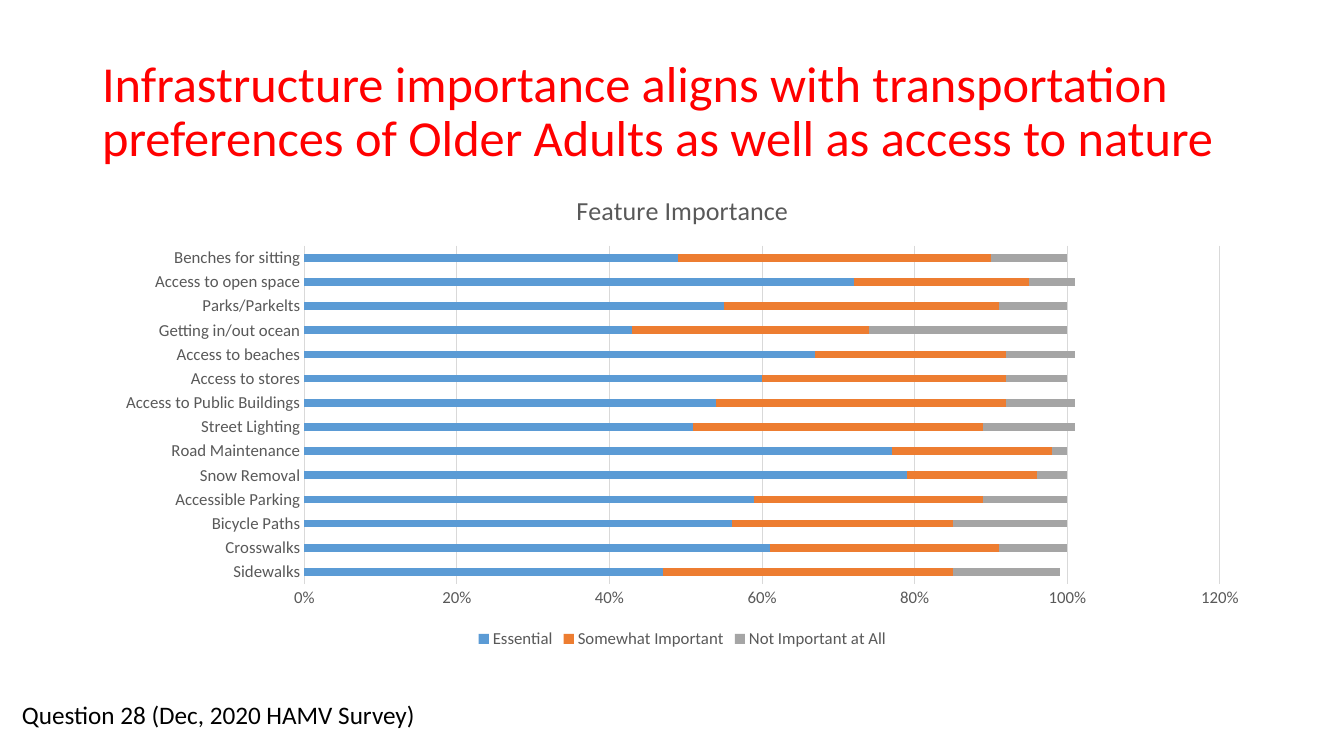
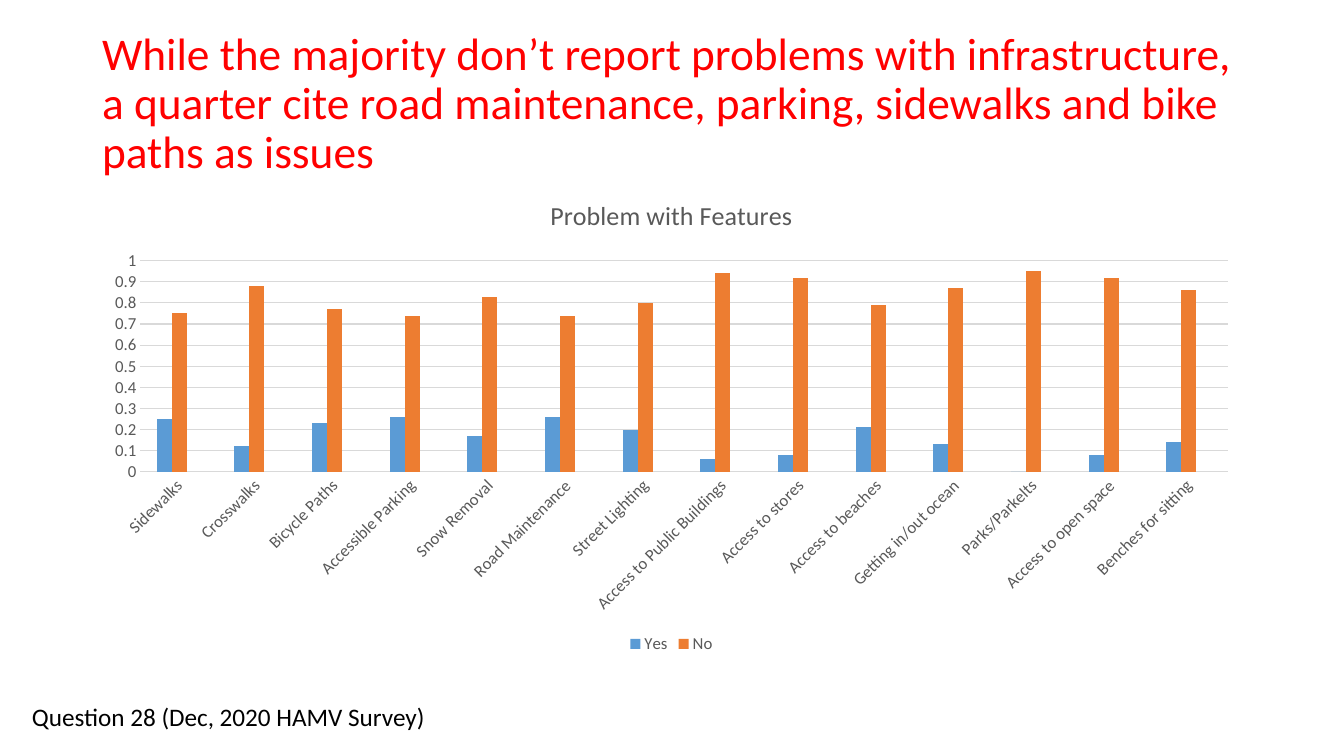
import pptx
import pptx.chart.data
import pptx.dml.color
import pptx.enum.chart
import pptx.enum.text
import pptx.oxml
import pptx.oxml.ns
import pptx.util
from dataclasses import dataclass


@dataclass(frozen=True)
class Theme:
    font: str = "Calibri"
    title: str = "FF0000"
    text: str = "000000"
    chart_text: str = "595959"
    grid: str = "D9D9D9"
    series: tuple = ("5B9BD5", "ED7D31", "A5A5A5")
    source_size: float = 18
    chart_title_size: float = 18.6
    label_size: float = 12
    line_width: float = 0.75


THEME = Theme()
EMU_PER_PX = 914400 / 100.8
CHART_TYPE = pptx.enum.chart.XL_CHART_TYPE
SOURCE = "Question 28 (Dec, 2020 HAMV Survey)"
FEATURES = [
    "Sidewalks", "Crosswalks", "Bicycle Paths", "Accessible Parking", "Snow Removal",
    "Road Maintenance", "Street Lighting", "Access to Public Buildings", "Access to stores",
    "Access to beaches", "Getting in/out ocean", "Parks/Parkelts", "Access to open space",
    "Benches for sitting",
]
SLIDES = [
    {
        "title": "Infrastructure importance aligns with transportation preferences "
                 "of Older Adults as well as access to nature",
        "title_size": 36,
        "title_box": (92, 40, 1159, 146),
        "chart_box": (103, 173, 1159, 480),
        "source_box": (12, 694, 440, 40),
        "chart_title": "Feature Importance",
        "chart_type": CHART_TYPE.BAR_STACKED,
        "overlap": 100,
        "number_format": "0%",
        "axis_top": 1.2,
        "axis_step": 0.2,
        "label_rotation": 0,
        "hidden_entries": [],
        "series": {
            "Essential": [0.47, 0.61, 0.56, 0.59, 0.79, 0.77, 0.51,
                          0.54, 0.6, 0.67, 0.43, 0.55, 0.72, 0.49],
            "Somewhat Important": [0.38, 0.3, 0.29, 0.3, 0.17, 0.21, 0.38,
                                   0.38, 0.32, 0.25, 0.31, 0.36, 0.23, 0.41],
            "Not Important at All": [0.14, 0.09, 0.15, 0.11, 0.04, 0.02, 0.12,
                                     0.09, 0.08, 0.09, 0.26, 0.09, 0.06, 0.1],
        },
    },
    {
        "title": "While the majority don’t report problems with infrastructure, "
                 "a quarter cite road maintenance, parking, sidewalks and bike paths as issues",
        "title_size": 32.4,
        "title_box": (92, 32, 1159, 146),
        "chart_box": (92, 178, 1159, 480),
        "source_box": (22, 696, 464, 40),
        "chart_title": "Problem with Features",
        "chart_type": CHART_TYPE.COLUMN_CLUSTERED,
        "overlap": 0,
        "number_format": "General",
        "axis_top": 1,
        "axis_step": 0.1,
        "label_rotation": -45,
        "hidden_entries": [2],
        "series": {
            "Yes": [0.25, 0.12, 0.23, 0.26, 0.17, 0.26, 0.2,
                    0.06, 0.08, 0.21, 0.13, 0, 0.08, 0.14],
            "No": [0.75, 0.88, 0.77, 0.74, 0.83, 0.74, 0.8,
                   0.94, 0.92, 0.79, 0.87, 0.95, 0.92, 0.86],
            "Series 3": [None] * len(FEATURES),
        },
    },
]


def box_emu(box):
    return [pptx.util.Emu(round(length * EMU_PER_PX)) for length in box]


def style_font(font, size, color):
    font.name = THEME.font
    font.size = pptx.util.Pt(size)
    font.bold = False
    font.color.rgb = pptx.dml.color.RGBColor.from_string(color)


presentation = pptx.Presentation()
presentation.slide_width, presentation.slide_height = box_emu((1344, 756))

for content in SLIDES:
    slide = presentation.slides.add_slide(presentation.slide_layouts[5])

    title = slide.shapes.title
    title.left, title.top, title.width, title.height = box_emu(content["title_box"])
    title.text_frame.word_wrap = True
    title.text_frame.auto_size = pptx.enum.text.MSO_AUTO_SIZE.NONE
    title.text_frame.vertical_anchor = pptx.enum.text.MSO_ANCHOR.MIDDLE
    paragraph = title.text_frame.paragraphs[0]
    paragraph.alignment = pptx.enum.text.PP_ALIGN.LEFT
    paragraph.line_spacing = 0.9
    run = paragraph.add_run()
    run.text = content["title"]
    style_font(run.font, content["title_size"], THEME.title)

    chart_data = pptx.chart.data.CategoryChartData()
    chart_data.categories = FEATURES
    for name, values in content["series"].items():
        chart_data.add_series(name, values)
    chart = slide.shapes.add_chart(
        content["chart_type"], *box_emu(content["chart_box"]), chart_data
    ).chart
    style_font(chart.font, THEME.label_size, THEME.chart_text)

    chart.has_title = True
    run = chart.chart_title.text_frame.paragraphs[0].add_run()
    run.text = content["chart_title"]
    style_font(run.font, THEME.chart_title_size, THEME.chart_text)
    chart.chart_title.include_in_layout = False

    plot = chart.plots[0]
    plot.gap_width = 219
    plot.overlap = content["overlap"]
    plot.vary_by_categories = False
    for series, color in zip(plot.series, THEME.series):
        series.format.fill.solid()
        series.format.fill.fore_color.rgb = pptx.dml.color.RGBColor.from_string(color)

    category_axis, value_axis = chart.category_axis, chart.value_axis
    for axis in (category_axis, value_axis):
        axis.major_tick_mark = pptx.enum.chart.XL_TICK_MARK.NONE
        axis.minor_tick_mark = pptx.enum.chart.XL_TICK_MARK.NONE
        style_font(axis.tick_labels.font, THEME.label_size, THEME.chart_text)
    category_axis._element.txPr.bodyPr.set("rot", str(content["label_rotation"] * 60000))
    value_axis.minimum_scale = 0
    value_axis.maximum_scale = content["axis_top"]
    value_axis.major_unit = content["axis_step"]
    value_axis.tick_labels.number_format = content["number_format"]
    value_axis.tick_labels.number_format_is_linked = False
    value_axis.format.line.fill.background()
    value_axis.has_major_gridlines = True
    for line in (category_axis.format.line, value_axis.major_gridlines.format.line):
        line.color.rgb = pptx.dml.color.RGBColor.from_string(THEME.grid)
        line.width = pptx.util.Pt(THEME.line_width)

    chart.has_legend = True
    chart.legend.position = pptx.enum.chart.XL_LEGEND_POSITION.BOTTOM
    chart.legend.include_in_layout = False
    style_font(chart.legend.font, THEME.label_size, THEME.chart_text)
    for index in content["hidden_entries"]:
        entry = pptx.oxml.parse_xml(
            f'<c:legendEntry {pptx.oxml.ns.nsdecls("c")}>'
            f'<c:idx val="{index}"/><c:delete val="1"/></c:legendEntry>'
        )
        chart.legend._element.insert(1, entry)

    source = slide.shapes.add_textbox(*box_emu(content["source_box"]))
    source.text_frame.word_wrap = True
    run = source.text_frame.paragraphs[0].add_run()
    run.text = SOURCE
    style_font(run.font, THEME.source_size, THEME.text)

presentation.save("out.pptx")
